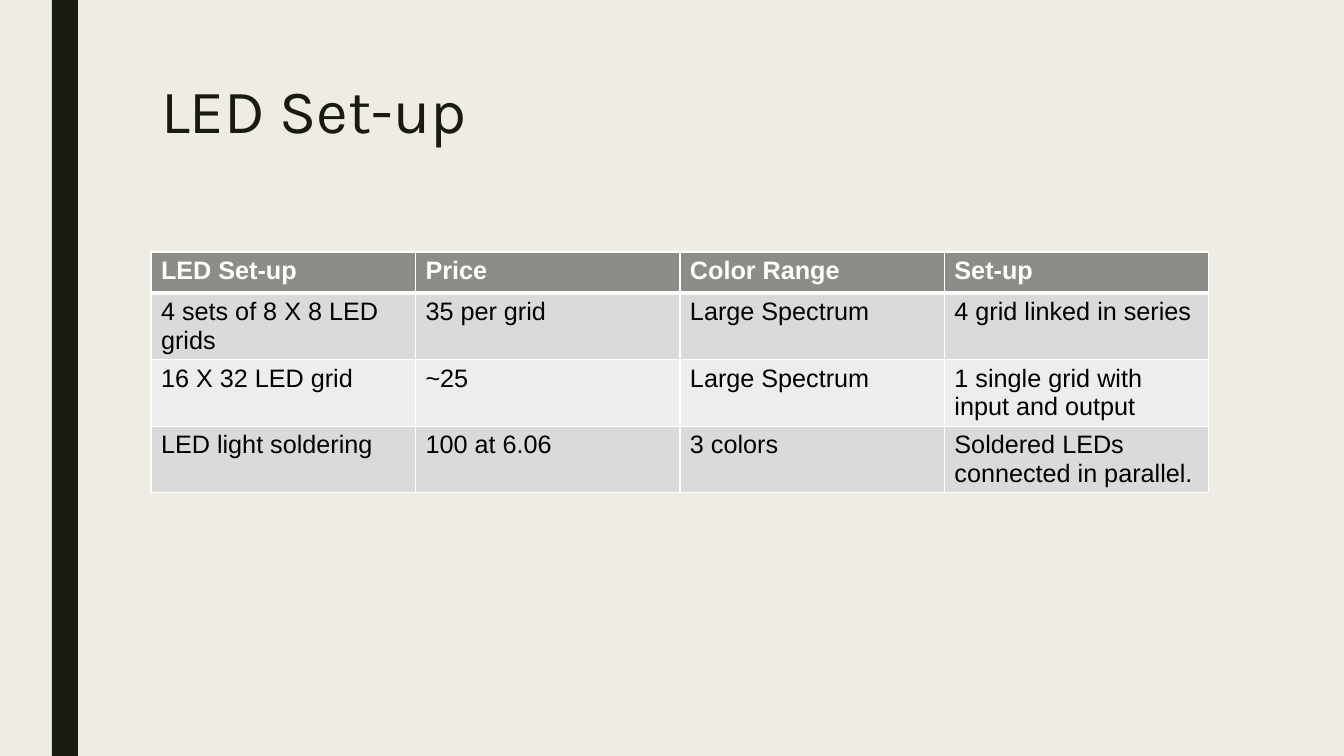
from dataclasses import dataclass

from lxml import etree
from pptx import Presentation
from pptx.dml.color import RGBColor
from pptx.enum.shapes import MSO_SHAPE
from pptx.enum.text import MSO_ANCHOR, MSO_AUTO_SIZE, PP_ALIGN
from pptx.oxml.ns import qn
from pptx.util import Emu, Pt

RECT = MSO_SHAPE.RECTANGLE
TOP = MSO_ANCHOR.TOP
LEFT = PP_ALIGN.LEFT
NO_FIT = MSO_AUTO_SIZE.NONE
TITLE_ONLY = 5
EMU_PER_PX = 914400 / 100.8

ROWS = [
    ["LED Set-up", "Price", "Color Range", "Set-up"],
    ["4 sets of 8 X 8 LED grids", "35 per grid", "Large Spectrum", "4 grid linked in series"],
    ["16 X 32 LED grid", "~25", "Large Spectrum", "1 single grid with input and output"],
    ["LED light soldering", "100 at 6.06", "3 colors", "Soldered LEDs connected in parallel."],
]


@dataclass(frozen=True)
class Theme:
    """Colours, fonts and type sizes of the slide."""
    background: str = "EFEDE3"
    dark: str = "191B0E"
    header: str = "8C8D86"
    bands: tuple = ("DADAD8", "EDEDED")
    white: str = "FFFFFF"
    black: str = "000000"
    title_font: str = "Karla"
    body_font: str = "Arial"
    title_size: int = 44
    body_size: int = 18
    rule: int = 1
    header_rule: int = 3


THEME = Theme()


def px(n):
    """Turn pixels into EMU."""
    return Emu(round(n * EMU_PER_PX))


def paint(fill, color):
    """Give a fill one solid colour."""
    fill.solid()
    fill.fore_color.rgb = RGBColor.from_string(color)


def style_text(tf, font, size, color, bold=False):
    """Format every run of a text frame."""
    for p in tf.paragraphs:
        p.alignment = LEFT
        for r in p.runs:
            r.font.name = font
            r.font.size = Pt(size)
            r.font.bold = bold
            r.font.color.rgb = RGBColor.from_string(color)


def add_bar(s, x, y, w, h):
    """Add the dark vertical bar."""
    sp = s.shapes.add_shape(RECT, px(x), px(y), px(w), px(h))
    sp.shadow.inherit = False
    paint(sp.fill, THEME.dark)
    sp.line.fill.background()


def set_title(s, text, x, y, w, h):
    """Place and format the title placeholder."""
    sp = s.shapes.title
    sp.left, sp.top, sp.width, sp.height = px(x), px(y), px(w), px(h)
    tf = sp.text_frame
    tf.text = text
    tf.word_wrap = True
    tf.auto_size = NO_FIT
    tf.vertical_anchor = TOP
    tf.paragraphs[0].line_spacing = 0.89
    style_text(tf, THEME.title_font, THEME.title_size, THEME.dark)


def set_borders(cell, top, bottom):
    """Draw white cell borders, with the top and bottom widths in points."""
    tc_pr = cell._tc.get_or_add_tcPr()
    widths = {"a:lnL": THEME.rule, "a:lnR": THEME.rule, "a:lnT": top, "a:lnB": bottom}
    for i, (tag, width) in enumerate(widths.items()):
        ln = etree.Element(qn(tag), w=str(Pt(width)))
        fill = etree.SubElement(ln, qn("a:solidFill"))
        etree.SubElement(fill, qn("a:srgbClr"), val=THEME.white)
        tc_pr.insert(i, ln)


def add_table(s, rows, x, y, w, row_h):
    """Add a table with a header row and banded body rows."""
    n_cols = len(rows[0])
    frame = s.shapes.add_table(len(rows), n_cols, px(x), px(y), px(w), px(row_h * len(rows)))
    table = frame.table
    for i, row in enumerate(rows):
        table.rows[i].height = px(row_h)
        is_header = i == 0
        fill = THEME.header if is_header else THEME.bands[(i - 1) % 2]
        color = THEME.white if is_header else THEME.black
        top = THEME.header_rule if i == 1 else THEME.rule
        bottom = THEME.header_rule if is_header else THEME.rule
        for j, text in enumerate(row):
            cell = table.cell(i, j)
            cell.text_frame.text = text
            style_text(cell.text_frame, THEME.body_font, THEME.body_size, color, is_header)
            paint(cell.fill, fill)
            set_borders(cell, top, bottom)


def main():
    """Build the slide and save it."""
    prs = Presentation()
    prs.slide_width, prs.slide_height = px(1344), px(756)
    s = prs.slides.add_slide(prs.slide_layouts[TITLE_ONLY])
    paint(s.background.fill, THEME.background)
    add_bar(s, 52, 0, 26, 756)
    set_title(s, "LED Set-up", 151, 76, 1058, 163)
    add_table(s, ROWS, 151, 252, 1058, 41)
    prs.save("out.pptx")


if __name__ == "__main__":
    main()
